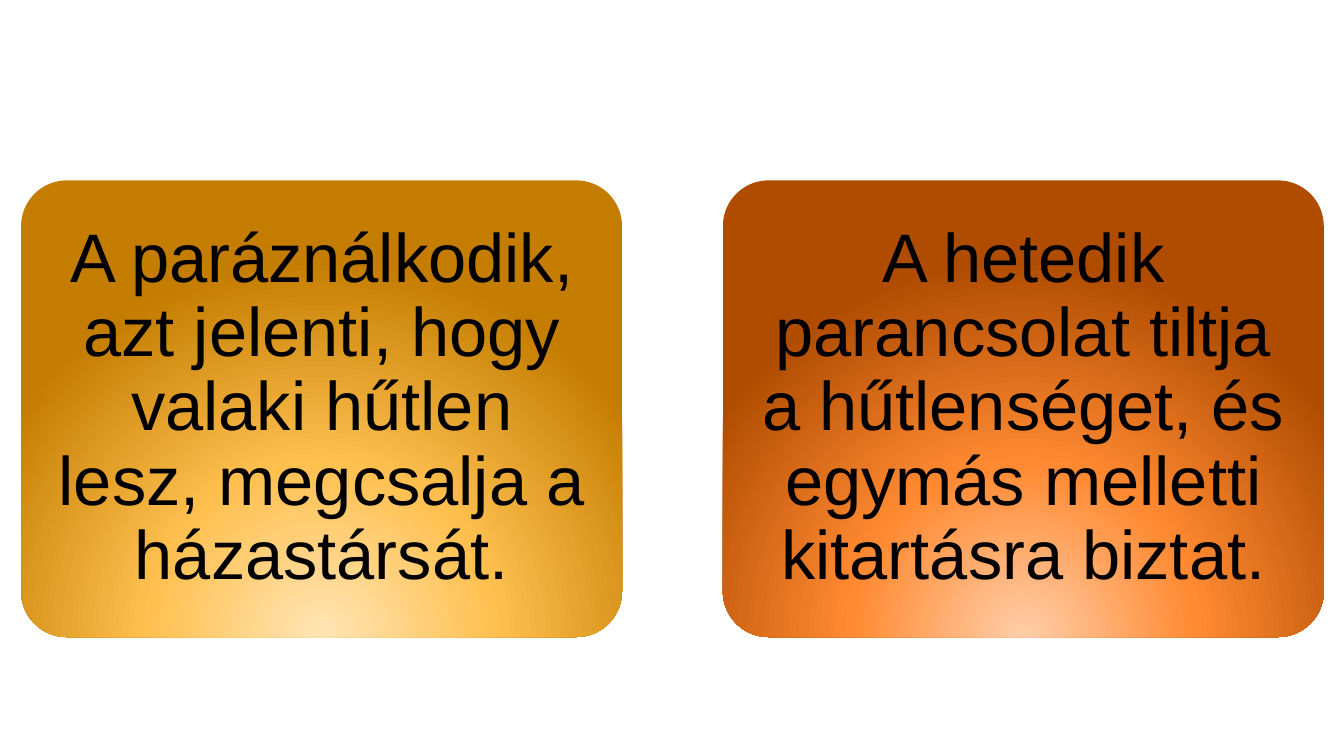
from lxml.etree import SubElement
from pptx import Presentation
from pptx.dml.color import RGBColor
from pptx.enum.shapes import MSO_SHAPE
from pptx.enum.text import MSO_ANCHOR, PP_ALIGN
from pptx.oxml.ns import qn
from pptx.util import Inches, Pt

CARDS = [
    ("A paráználkodik, azt jelenti, hogy valaki hűtlen lesz, megcsalja a házastársát.",
     ("FFE5B5", "FFC050", "C47D00")),
    ("A hetedik parancsolat tiltja a hűtlenséget, és egymás melletti kitartásra biztat.",
     ("FFCEA9", "FF8A32", "B04C00")),
]
STOPS = (0, 46, 100)
GLOW = {"l": 50, "t": 130, "r": 50, "b": -30}
WIDE, HIGH = 13.33, 7.5
LEFT, TOP = 0.21, 1.79
CARD_W, CARD_H = 5.96, 4.53
STEP = 6.96
EDGE = 0.13
INSET = 0.2


def color(code):
    return RGBColor.from_string(code)


def glow(shape, codes):
    """Fill the shape with a round gradient centred below its lower edge."""
    shape.fill.gradient()
    grad = shape._element.spPr.find(qn("a:gradFill"))
    for child in list(grad):
        grad.remove(child)
    stops = SubElement(grad, qn("a:gsLst"))
    for place, code in zip(STOPS, codes):
        stop = SubElement(stops, qn("a:gs"), pos=str(place * 1000))
        SubElement(stop, qn("a:srgbClr"), val=code)
    path = SubElement(grad, qn("a:path"), path="circle")
    sides = {side: str(share * 1000) for side, share in GLOW.items()}
    SubElement(path, qn("a:fillToRect"), **sides)


def add_card(slide, left, text, codes):
    card = slide.shapes.add_shape(
        MSO_SHAPE.ROUNDED_RECTANGLE,
        Inches(left), Inches(TOP), Inches(CARD_W), Inches(CARD_H))
    card.adjustments[0] = 0.1
    card.shadow.inherit = False
    card.line.fill.background()
    glow(card, codes)

    box = slide.shapes.add_textbox(
        Inches(left + EDGE), Inches(TOP + EDGE),
        Inches(CARD_W - 2 * EDGE), Inches(CARD_H - 2 * EDGE))
    frame = box.text_frame
    frame.word_wrap = True
    frame.vertical_anchor = MSO_ANCHOR.MIDDLE
    frame.margin_left = frame.margin_right = Inches(INSET)
    frame.margin_top = frame.margin_bottom = Inches(INSET)
    para = frame.paragraphs[0]
    para.text = text
    para.alignment = PP_ALIGN.CENTER
    para.line_spacing = 0.9
    para.font.name = "Arial"
    para.font.size = Pt(49)
    para.font.color.rgb = color("000000")


def main():
    deck = Presentation()
    deck.slide_width, deck.slide_height = Inches(WIDE), Inches(HIGH)
    slide = deck.slides.add_slide(deck.slide_layouts[6])
    for col, (text, codes) in enumerate(CARDS):
        add_card(slide, LEFT + col * STEP, text, codes)
    deck.save("out.pptx")


if __name__ == "__main__":
    main()
